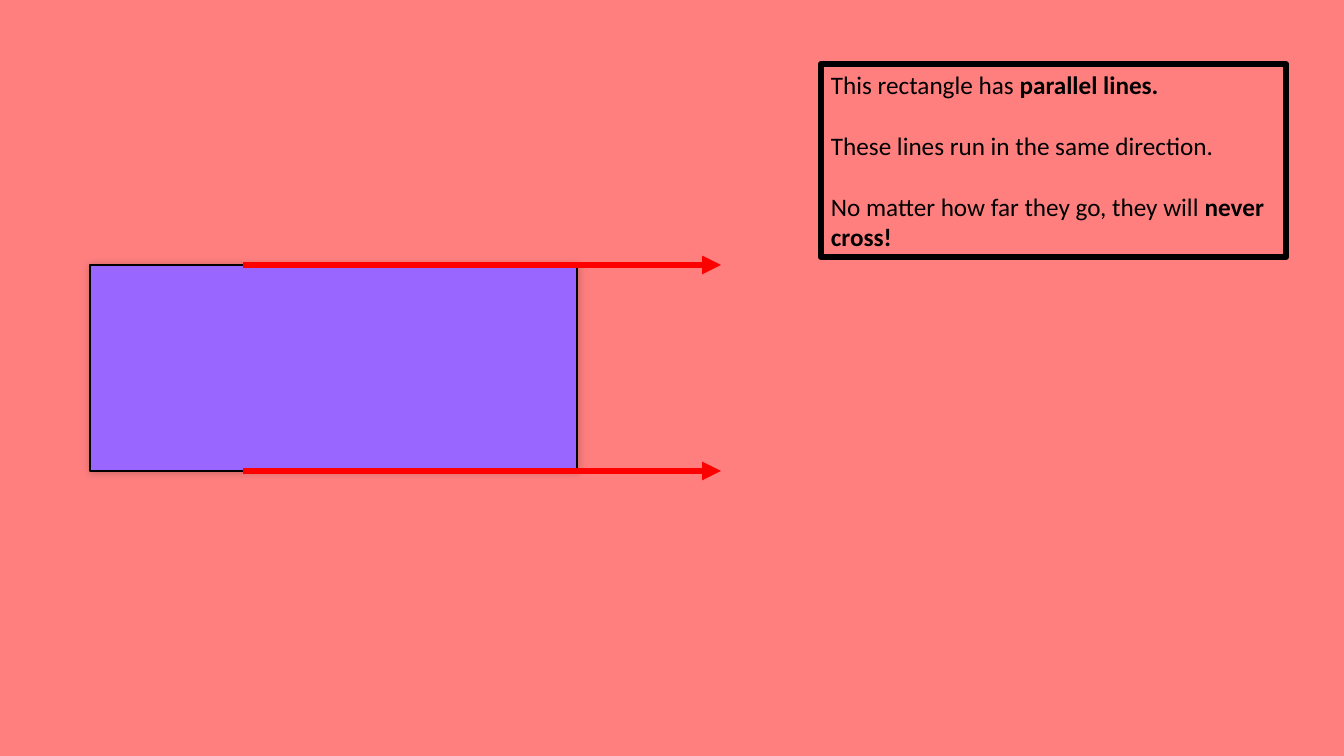
"""Build a slide that explains parallel lines with a rectangle and two arrows."""
from dataclasses import dataclass

from lxml import etree
from pptx import Presentation
from pptx.dml.color import RGBColor
from pptx.enum.shapes import MSO_CONNECTOR, MSO_SHAPE
from pptx.enum.text import MSO_AUTO_SIZE, PP_ALIGN
from pptx.oxml import parse_xml
from pptx.oxml.ns import nsdecls, qn
from pptx.util import Emu, Pt

PROCESS = MSO_SHAPE.FLOWCHART_PROCESS
STRAIGHT = MSO_CONNECTOR.STRAIGHT
GROW = MSO_AUTO_SIZE.SHAPE_TO_FIT_TEXT
LEFT = PP_ALIGN.LEFT
BLANK_LAYOUT = 6
SLIDE_WIDTH, SLIDE_HEIGHT = 1344, 756
EMU_PER_PX = 12192000 / SLIDE_WIDTH


@dataclass(frozen=True)
class Theme:
    background: RGBColor = RGBColor(0xFF, 0x7F, 0x7F)
    rectangle: RGBColor = RGBColor(0x99, 0x66, 0xFF)
    arrow: RGBColor = RGBColor(0xFF, 0x00, 0x00)
    ink: RGBColor = RGBColor(0x00, 0x00, 0x00)
    font: str = "Calibri"
    text_size: float = 18
    paragraph_gap: float = 22
    thin: float = 1
    thick: float = 4.5


@dataclass(frozen=True)
class Box:
    left: int
    top: int
    width: int
    height: int

    def emu(self) -> tuple[Emu, Emu, Emu, Emu]:
        """Return the place and size in EMU."""
        return px(self.left), px(self.top), px(self.width), px(self.height)


@dataclass(frozen=True)
class Sentence:
    plain: str
    bold: str = ""


THEME = Theme()
RECTANGLE = Box(90, 265, 487, 206)
EXPLANATION = Box(821, 64, 465, 193)
ARROW_START, ARROW_END = 243, 721
SENTENCES = (
    Sentence("This rectangle has ", "parallel lines."),
    Sentence("These lines run in the same direction."),
    Sentence("No matter how far they go, they will ", "never cross!"),
)


def px(length: int) -> Emu:
    """Turn px into EMU."""
    return Emu(round(length * EMU_PER_PX))


def set_line(item, color: RGBColor, width: float) -> None:
    """Give a shape or connector a solid line."""
    item.line.color.rgb = color
    item.line.width = Pt(width)


def add_rectangle(slide, box: Box) -> None:
    """Draw the filled rectangle with its soft shadow."""
    rectangle = slide.shapes.add_shape(PROCESS, *box.emu())
    rectangle.fill.solid()
    rectangle.fill.fore_color.rgb = THEME.rectangle
    set_line(rectangle, THEME.ink, THEME.thin)
    rectangle.shadow.inherit = False
    effects = rectangle.element.spPr.find(qn("a:effectLst"))
    effects.append(parse_xml(
        f'<a:outerShdw {nsdecls("a")} blurRad="{Pt(6)}" dist="0" dir="18900000">'
        f'<a:srgbClr val="{THEME.ink}"><a:alpha val="20000"/></a:srgbClr></a:outerShdw>'
    ))


def add_arrow(slide, level: int) -> None:
    """Draw one arrow to the right along a side of the rectangle."""
    arrow = slide.shapes.add_connector(
        STRAIGHT, px(ARROW_START), px(level), px(ARROW_END), px(level)
    )
    set_line(arrow, THEME.arrow, THEME.thick)
    properties = arrow.element.spPr
    etree.SubElement(properties.find(qn("a:ln")), qn("a:tailEnd"), type="triangle")
    etree.SubElement(properties, qn("a:effectLst"))


def add_run(paragraph, text: str, *, bold: bool = False,
            size: float = THEME.text_size, color: RGBColor = THEME.ink) -> None:
    """Add formatted text to a paragraph."""
    run = paragraph.add_run()
    run.text = text
    run.font.name = THEME.font
    run.font.size = Pt(size)
    run.font.bold = bold
    run.font.color.rgb = color


def add_explanation(slide, box: Box, sentences: tuple[Sentence, ...]) -> None:
    """Write the sentences in an outlined box."""
    explanation = slide.shapes.add_textbox(*box.emu())
    set_line(explanation, THEME.ink, THEME.thick)
    frame = explanation.text_frame
    frame.word_wrap = True
    frame.auto_size = GROW
    for index, sentence in enumerate(sentences):
        paragraph = frame.add_paragraph() if index else frame.paragraphs[0]
        paragraph.alignment = LEFT
        paragraph.space_before = Pt(THEME.paragraph_gap if index else 0)
        add_run(paragraph, sentence.plain)
        if sentence.bold:
            add_run(paragraph, sentence.bold, bold=True)


def main() -> None:
    """Build and save the slide."""
    deck = Presentation()
    deck.slide_width, deck.slide_height = px(SLIDE_WIDTH), px(SLIDE_HEIGHT)
    slide = deck.slides.add_slide(deck.slide_layouts[BLANK_LAYOUT])
    slide.background.fill.solid()
    slide.background.fill.fore_color.rgb = THEME.background
    add_rectangle(slide, RECTANGLE)
    for level in (RECTANGLE.top, RECTANGLE.top + RECTANGLE.height):
        add_arrow(slide, level)
    add_explanation(slide, EXPLANATION, SENTENCES)
    deck.save("out.pptx")


if __name__ == "__main__":
    main()
